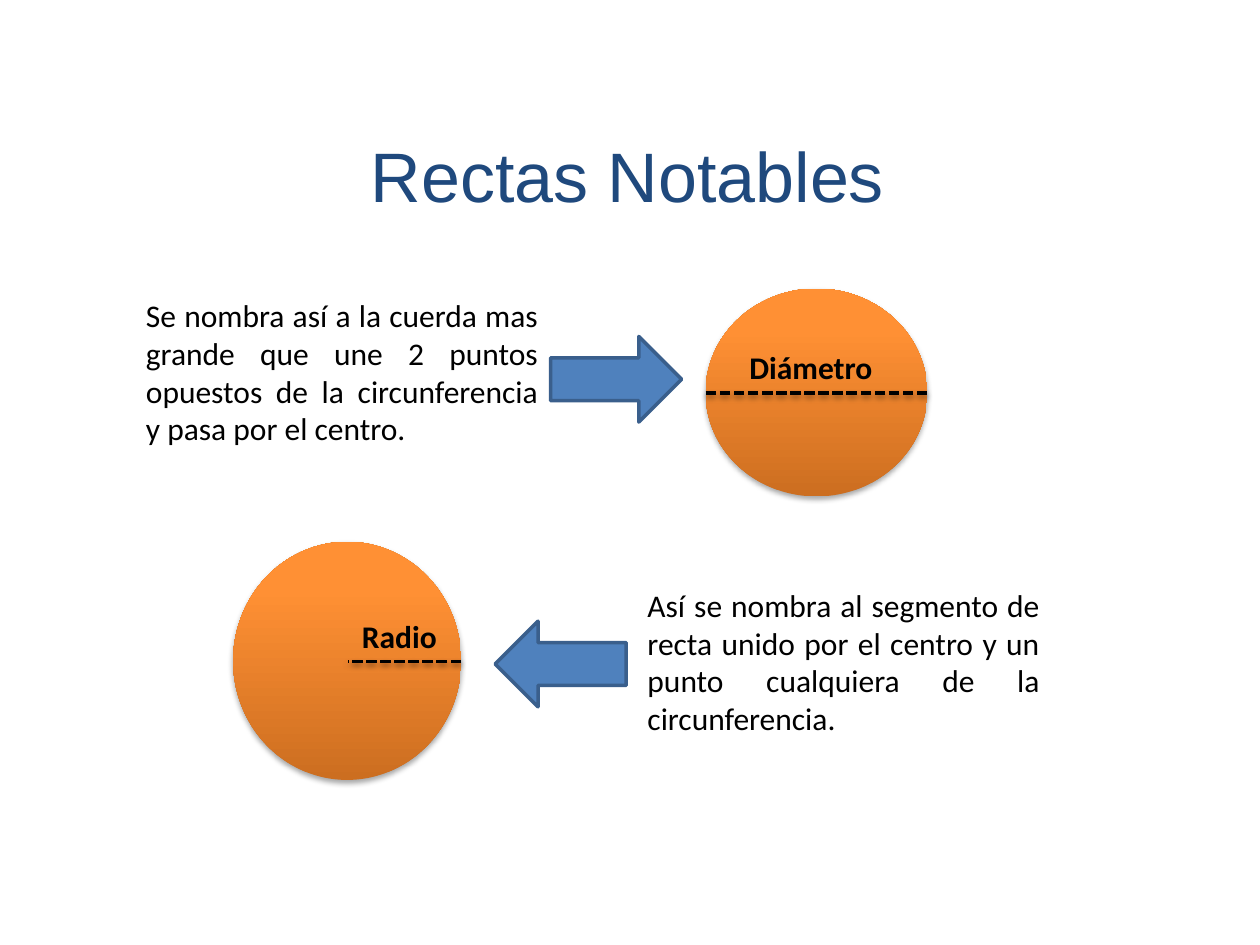
"""Build the "Rectas Notables" slide on the diameter and the radius of a circle."""
import copy
import dataclasses

import pptx
import pptx.dml.color
import pptx.enum.dml
import pptx.enum.shapes
import pptx.enum.text
import pptx.oxml
import pptx.util

Inches = pptx.util.Inches
Pt = pptx.util.Pt
RGBColor = pptx.dml.color.RGBColor
MSO_SHAPE = pptx.enum.shapes.MSO_SHAPE
PP_ALIGN = pptx.enum.text.PP_ALIGN


@dataclasses.dataclass(frozen=True)
class Theme:
    title_font: str = "Arial"
    body_font: str = "Calibri"
    title_size: int = 40
    body_size: int = 18
    title_color: str = "1F497D"
    text_color: str = "000000"
    arrow_fill: str = "4F81BD"
    arrow_line: str = "3A5F8C"
    circle_stops: tuple = ((0, "CC6E20"), (0.8, "FF9034"), (1, "FF9136"))


theme = Theme()


def write_text(shape, text, alignment, font_name, size, color, bold=False):
    shape.text_frame.text = text
    shape.text_frame.word_wrap = True
    paragraph = shape.text_frame.paragraphs[0]
    paragraph.alignment = alignment
    font = paragraph.runs[0].font
    font.name, font.size, font.bold = font_name, Pt(size), bold
    font.color.rgb = RGBColor.from_string(color)


def add_shadow(shape, distance, opacity):
    namespace = "http://schemas.openxmlformats.org/drawingml/2006/main"
    shape._element.spPr.append(pptx.oxml.parse_xml(
        f'<a:effectLst xmlns:a="{namespace}">'
        f'<a:outerShdw blurRad="{Pt(3.1)}" dist="{Pt(distance)}" dir="5400000" rotWithShape="0">'
        f'<a:srgbClr val="000000"><a:alpha val="{opacity * 1000}"/></a:srgbClr>'
        '</a:outerShdw></a:effectLst>'))


presentation = pptx.Presentation()
presentation.slide_width = Inches(10)
presentation.slide_height = Inches(7.5)
slide = presentation.slides.add_slide(presentation.slide_layouts[5])

title = slide.shapes.title
title.left, title.top, title.width, title.height = map(Inches, (0.53, 1, 8.9, 0.77))
write_text(title, "Rectas Notables", PP_ALIGN.CENTER,
           theme.title_font, theme.title_size, theme.title_color)

circles = [
    ("Diámetro", (5.6, 2.29, 1.76, 1.65), (5.44, 2.71, 1.99, 0.35), (5.6, 7.36, 3.12)),
    ("Radio", (1.85, 4.3, 1.81, 1.89), (2.56, 4.85, 1.22, 0.4), (3.66, 2.76, 5.25)),
]
for name, circle_box, label_box, (start, end, height) in circles:
    group = slide.shapes.add_group_shape()
    circle = group.shapes.add_shape(MSO_SHAPE.OVAL, *map(Inches, circle_box))
    circle.fill.gradient()
    circle.fill.gradient_angle = 90
    stop_list = circle._element.spPr.xpath(".//a:gsLst")[0]
    stop_list.append(copy.deepcopy(stop_list[-1]))
    for stop, (position, color) in zip(circle.fill.gradient_stops, theme.circle_stops):
        stop.position = position
        stop.color.rgb = RGBColor.from_string(color)
    circle.line.fill.background()
    add_shadow(circle, 1.8, 35)

    label = group.shapes.add_textbox(*map(Inches, label_box))
    write_text(label, name, PP_ALIGN.CENTER, theme.body_font, theme.body_size,
               theme.text_color, bold=True)

    segment = group.shapes.add_connector(
        pptx.enum.shapes.MSO_CONNECTOR.STRAIGHT, *map(Inches, (start, height, end, height)))
    segment.line.color.rgb = RGBColor.from_string(theme.text_color)
    segment.line.width = Pt(2)
    segment.line.dash_style = pptx.enum.dml.MSO_LINE.SQUARE_DOT
    add_shadow(segment, 1.6, 38)

definitions = [
    ("Se nombra así a la cuerda mas grande que une 2 puntos opuestos de la "
     "circunferencia y pasa por el centro.", (1.06, 2.3, 3.31, 1.62)),
    ("Así se nombra al segmento de recta unido por el centro y un punto "
     "cualquiera de la circunferencia.", (5.04, 4.6, 3.31, 1.31)),
]
for text, box in definitions:
    definition = slide.shapes.add_textbox(*map(Inches, box))
    write_text(definition, text, PP_ALIGN.JUSTIFY, theme.body_font, theme.body_size,
               theme.text_color)

for left, top, rotation in [(4.37, 2.67, 0), (3.93, 4.93, 180)]:
    arrow = slide.shapes.add_shape(
        MSO_SHAPE.RIGHT_ARROW, *map(Inches, (left, top, 1.04, 0.68)))
    arrow.rotation = rotation
    arrow.fill.solid()
    arrow.fill.fore_color.rgb = RGBColor.from_string(theme.arrow_fill)
    arrow.line.color.rgb = RGBColor.from_string(theme.arrow_line)
    arrow.line.width = Pt(2)
    arrow.shadow.inherit = False

presentation.save("out.pptx")
